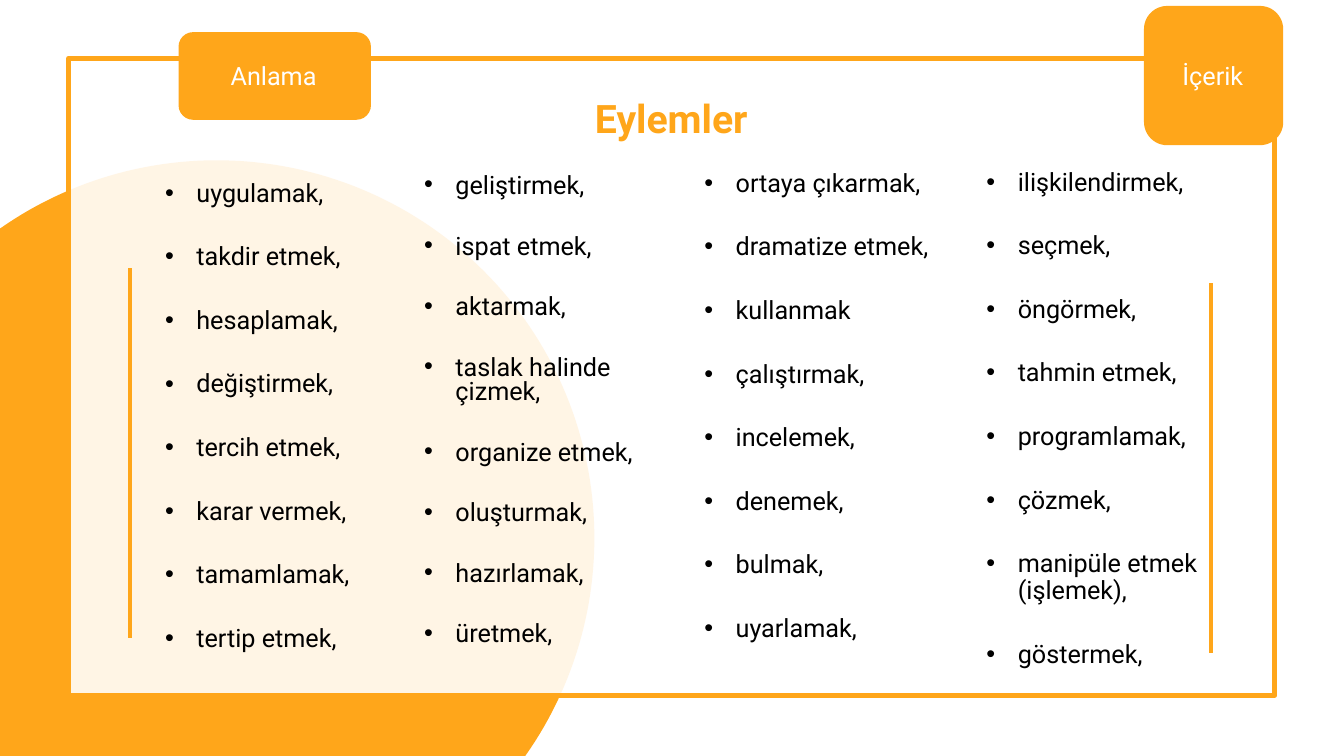
import math
from lxml import etree
from pptx import Presentation
from pptx.dml.color import RGBColor
from pptx.enum.shapes import MSO_CONNECTOR, MSO_SHAPE
from pptx.enum.text import PP_ALIGN
from pptx.oxml.ns import qn
from pptx.util import Cm, Pt

RECT, ROUNDED = MSO_SHAPE.RECTANGLE, MSO_SHAPE.ROUNDED_RECTANGLE
STRAIGHT, CENTER = MSO_CONNECTOR.STRAIGHT, PP_ALIGN.CENTER

# Content; lengths in cm
FONT = "Roboto"
COLORS = {"orange": "FFA61A", "white": "FFFFFF", "black": "000000"}
SLIDE_W, SLIDE_H = 33.87, 19.05
CIRCLE_X, CIRCLE_Y, RADIUS = 5.46, 13.56, 9.52
FRAME = (1.73, 1.47, 30.4, 16.05)
SIDE_BARS = [(3.28, 6.76, 16.08), (30.51, 7.14, 16.46)]  # x, top, bottom
TITLE = ("Eylemler", (2.31, 2.39, 29.21, 3.68))
TABS = [  # label, rounded box, label box
    ("İçerik", (28.83, 0.15, 3.51, 3.51), (28.04, 1.47, 5.05, 0.91)),
    ("Anlama", (4.5, 0.81, 4.85, 2.21), (4.37, 1.47, 5.05, 0.91)),
]
VERB_COLUMNS = [  # box, line spacing, verbs
    ((3.91, 4.42, 7.34, 12.34), 0.9,
     ["uygulamak,", "takdir etmek,", "hesaplamak,", "değiştirmek,",
      "tercih etmek,", "karar vermek,", "tamamlamak,", "tertip etmek,"]),
    ((10.44, 4.29, 8.97, 12.34), 0.8,
     ["geliştirmek,", "ispat etmek,", "aktarmak,", "taslak halinde \nçizmek,",
      "organize etmek,", "oluşturmak,", "hazırlamak,", "üretmek,"]),
    ((17.5, 4.17, 8, 14.17), 0.9,
     ["ortaya çıkarmak,", "dramatize etmek,", "kullanmak", "çalıştırmak,",
      "incelemek,", "denemek,", "bulmak,", "uyarlamak,"]),
    ((24.61, 4.14, 7.82, 13.84), 0.9,
     ["ilişkilendirmek,", "seçmek,", "öngörmek,", "tahmin etmek,",
      "programlamak,", "çözmek,", "manipüle etmek (işlemek),", "göstermek,"]),
]
INDENT = Cm(0.79)


def rgb(name):
    return RGBColor.from_string(COLORS[name])


def cm(box):
    return [Cm(v) for v in box]


def paint(s, fill, line=None, width=0):
    s.shadow.inherit = False
    s.fill.solid()
    s.fill.fore_color.rgb = rgb(fill)
    if line:
        s.line.color.rgb = rgb(line)
        s.line.width = Pt(width)
    else:
        s.line.fill.background()


def add_run(p, text, size, color, bold=False):
    r = p.add_run()
    r.text = text
    r.font.name, r.font.size, r.font.bold = FONT, Pt(size), bold
    r.font.color.rgb = rgb(color)


def text_frame(box):
    tf = shapes.add_textbox(*cm(box)).text_frame
    tf.word_wrap = True
    return tf


def centred_text(text, box, size, color, bold=False):
    p = text_frame(box).paragraphs[0]
    p.alignment, p.line_spacing = CENTER, 0.9
    add_run(p, text, size, color, bold)


def add_bullet(p):
    pPr = p._p.get_or_add_pPr()
    pPr.set("marL", str(INDENT))
    pPr.set("indent", str(-INDENT))
    etree.SubElement(pPr, qn("a:buFont")).set("typeface", "Arial")
    etree.SubElement(pPr, qn("a:buChar")).set("char", "•")


prs = Presentation()
prs.slide_width, prs.slide_height = Cm(SLIDE_W), Cm(SLIDE_H)
shapes = prs.slides.add_slide(prs.slide_layouts[6]).shapes

# Circle cut off by the left and bottom slide edges
start = math.pi + math.acos(CIRCLE_X / RADIUS)
end = 2 * math.pi + math.asin((SLIDE_H - CIRCLE_Y) / RADIUS)
STEPS = 120
angles = [start + (end - start) * i / STEPS for i in range(STEPS + 1)]
arc = [(Cm(CIRCLE_X + RADIUS * math.cos(a)), Cm(CIRCLE_Y + RADIUS * math.sin(a)))
       for a in angles]
outline = shapes.build_freeform(0, Cm(SLIDE_H))
outline.add_line_segments(arc, close=True)
paint(outline.convert_to_shape(), "orange")

# Translucent frame
frame = shapes.add_shape(RECT, *cm(FRAME))
paint(frame, "white", "orange", 3.5)
frame_color = frame._element.spPr.find(qn("a:solidFill"))[0]
etree.SubElement(frame_color, qn("a:alpha")).set("val", "89000")

# Side bars
for x, top, bottom in SIDE_BARS:
    bar = shapes.add_connector(STRAIGHT, *cm((x, top, x, bottom)))
    bar.line.color.rgb = rgb("orange")
    bar.line.width = Pt(3)
    etree.SubElement(bar._element.spPr, qn("a:effectLst"))

# Title and tabs
centred_text(*TITLE, 28, "orange", True)
for label, box, label_box in TABS:
    paint(shapes.add_shape(ROUNDED, *cm(box)), "orange")
    centred_text(label, label_box, 18, "white")

# Verb columns
for box, spacing, verbs in VERB_COLUMNS:
    tf = text_frame(box)
    for i, verb in enumerate(verbs):
        p = tf.add_paragraph() if i else tf.paragraphs[0]
        p.line_spacing, p.space_before, p.space_after = spacing, Pt(10), Pt(16)
        add_bullet(p)
        for j, part in enumerate(verb.split("\n")):
            if j:
                p.add_line_break()
            add_run(p, part, 18, "black")

prs.save("out.pptx")
